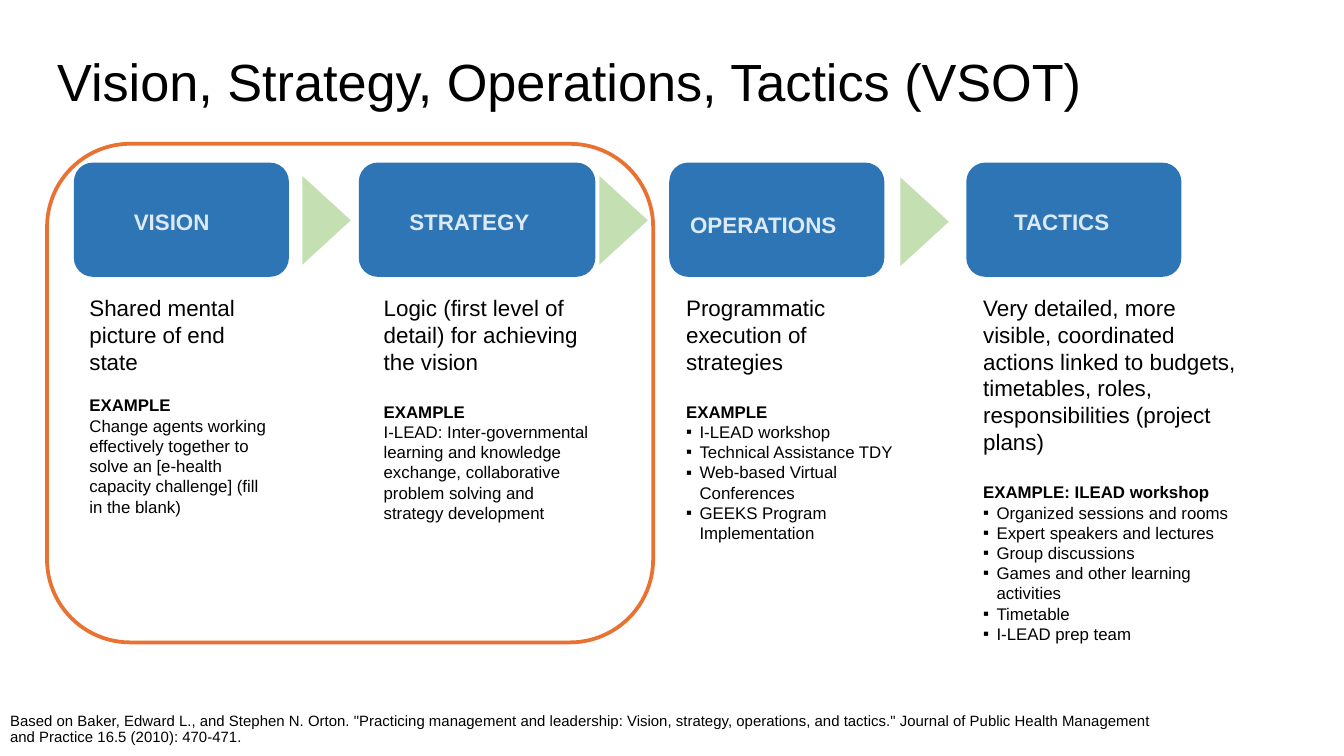
from dataclasses import dataclass

from lxml import etree
from pptx import Presentation
from pptx import util as u
from pptx.dml.color import RGBColor
from pptx.enum import shapes, text
from pptx.oxml import ns

COLORS = {"ink": "000000", "stage": "2E75B5", "label": "DDEAF6",
          "arrow": "C4E0B2", "frame": "E97132"}
FONT = "Arial"


@dataclass
class Stage:
    name: str
    left: float
    width: float
    label_left: float
    label_top: float
    label_width: float
    text_left: float
    text_width: float
    text_height: float
    summary: str
    gap: float
    heading: str
    examples: tuple[str, ...]
    bulleted: bool


@dataclass
class Arrow:
    left: float
    top: float


STAGES = [
    Stage("VISION", 0.55, 1.6, 0.92, 1.51, 0.88, 0.59, 1.47, 1.89,
          "Shared mental picture of end state", 11, "EXAMPLE",
          ("Change agents working effectively together to solve an "
           "[e-health capacity challenge] (fill in the blank)",), False),
    Stage("STRATEGY", 2.67, 1.76, 2.97, 1.51, 1.18, 2.78, 1.7, 1.94,
          "Logic (first level of detail) for achieving the vision", 14.4, "EXAMPLE",
          ("I-LEAD: Inter-governmental learning and knowledge exchange, "
           "collaborative problem solving and strategy development",), False),
    Stage("OPERATIONS", 4.98, 1.6, 5.06, 1.53, 1.37, 5.03, 1.79, 1.94,
          "Programmatic execution of strategies", 14.4, "EXAMPLE",
          ("I-LEAD workshop", "Technical Assistance TDY",
           "Web-based Virtual Conferences", "GEEKS Program Implementation"), True),
    Stage("TACTICS", 7.19, 1.6, 7.47, 1.51, 1.01, 7.24, 2.07, 2.7,
          "Very detailed, more visible, coordinated actions linked to budgets, "
          "timetables, roles, responsibilities (project plans)", 14.4,
          "EXAMPLE: ILEAD workshop",
          ("Organized sessions and rooms", "Expert speakers and lectures",
           "Group discussions", "Games and other learning activities",
           "Timetable", "I-LEAD prep team"), True),
]
ARROWS = [Arrow(2.1, 1.46), Arrow(4.31, 1.46), Arrow(6.55, 1.47)]


def rgb(name: str) -> RGBColor:
    """Return a named colour."""
    return RGBColor.from_string(COLORS[name])


def add_box(page, left: float, top: float, width: float, height: float,
            anchor=text.MSO_ANCHOR.TOP):
    """Add a wrapping text box and return its frame."""
    frame = page.shapes.add_textbox(*map(u.Inches, (left, top, width, height))).text_frame
    frame.word_wrap = True
    frame.vertical_anchor = anchor
    frame.margin_left = frame.margin_right = u.Inches(0.3) // 4
    frame.margin_top = frame.margin_bottom = u.Inches(0.3) // 8
    return frame


def add_bullet(para) -> None:
    """Give a paragraph a small square bullet with a hanging indent."""
    props = para._p.get_or_add_pPr()
    props.set("marL", str(u.Inches(0.1)))
    props.set("indent", str(u.Inches(-0.1)))
    color = etree.SubElement(props, ns.qn("a:buClr"))
    etree.SubElement(color, ns.qn("a:srgbClr"), val=COLORS["ink"])
    etree.SubElement(props, ns.qn("a:buFont"), typeface=FONT)
    etree.SubElement(props, ns.qn("a:buChar"), char="▪")


def write(frame, words: str, *, size: float, bold: bool = False, color: str = "ink",
          before: float = 0, spacing: float = 1.0, bullet: bool = False) -> None:
    """Write one formatted paragraph, using the empty first one if there is one."""
    first = frame.paragraphs[0]
    para = frame.add_paragraph() if first.runs else first
    if bullet:
        add_bullet(para)
    para.line_spacing = spacing
    if before:
        para.space_before = u.Pt(before)
    span = para.add_run()
    span.text = words
    span.font.name = FONT
    span.font.size = u.Pt(size)
    span.font.bold = bold
    span.font.color.rgb = rgb(color)


def add_figure(page, kind, left: float, top: float, width: float, height: float,
               fill: str | None = None, line: str | None = None):
    """Add a preset shape with a plain fill or outline."""
    figure = page.shapes.add_shape(kind, *map(u.Inches, (left, top, width, height)))
    figure.shadow.inherit = False
    if fill:
        figure.fill.solid()
        figure.fill.fore_color.rgb = rgb(fill)
    else:
        figure.fill.background()
    if line:
        figure.line.color.rgb = rgb(line)
        figure.line.width = u.Pt(2)
    else:
        figure.line.fill.background()
    return figure


def add_body(page, stage: Stage) -> None:
    """Write the summary and the examples of a stage."""
    body = add_box(page, stage.text_left, 2.15, stage.text_width, stage.text_height)
    write(body, stage.summary, size=12)
    write(body, stage.heading, size=9, bold=True, before=stage.gap)
    for example in stage.examples:
        write(body, example, size=9, bullet=stage.bulleted)


def add_block(page, stage: Stage) -> None:
    """Draw the block of a stage and its label."""
    add_figure(page, shapes.MSO_SHAPE.ROUNDED_RECTANGLE,
               stage.left, 1.21, stage.width, 0.85, fill="stage")
    label = add_box(page, stage.label_left, stage.label_top, stage.label_width, 0.28)
    write(label, stage.name, size=12, bold=True, color="label")


def add_arrow(page, arrow: Arrow) -> None:
    """Draw a triangle pointing to the next stage."""
    figure = add_figure(page, shapes.MSO_SHAPE.ISOSCELES_TRIANGLE,
                        arrow.left, arrow.top, 0.66, 0.36, fill="arrow")
    figure.rotation = 90


def main() -> None:
    """Build and save the slide."""
    deck = Presentation()
    deck.slide_width = u.Inches(10)
    deck.slide_height = deck.slide_width * 9 // 16
    page = deck.slides.add_slide(deck.slide_layouts[6])
    title = add_box(page, 0.35, -0.01, 8.19, 1.28, text.MSO_ANCHOR.MIDDLE)
    write(title, "Vision, Strategy, Operations, Tactics (VSOT)", size=28, spacing=0.9)
    source = add_box(page, 0, 5.27, 8.84, 0.35)
    write(source, "Based on Baker, Edward L., and Stephen N. Orton. \"Practicing management "
          "and leadership: Vision, strategy, operations, and tactics.\" Journal of Public "
          "Health Management and Practice 16.5 (2010): 470-471.", size=8, spacing=0.9)
    for stage in STAGES:
        add_body(page, stage)
    for stage in STAGES:
        add_block(page, stage)
    for arrow in ARROWS:
        add_arrow(page, arrow)
    add_figure(page, shapes.MSO_SHAPE.ROUNDED_RECTANGLE, 0.35, 1.07, 4.51, 3.71, line="frame")
    deck.save("out.pptx")


if __name__ == "__main__":
    main()
